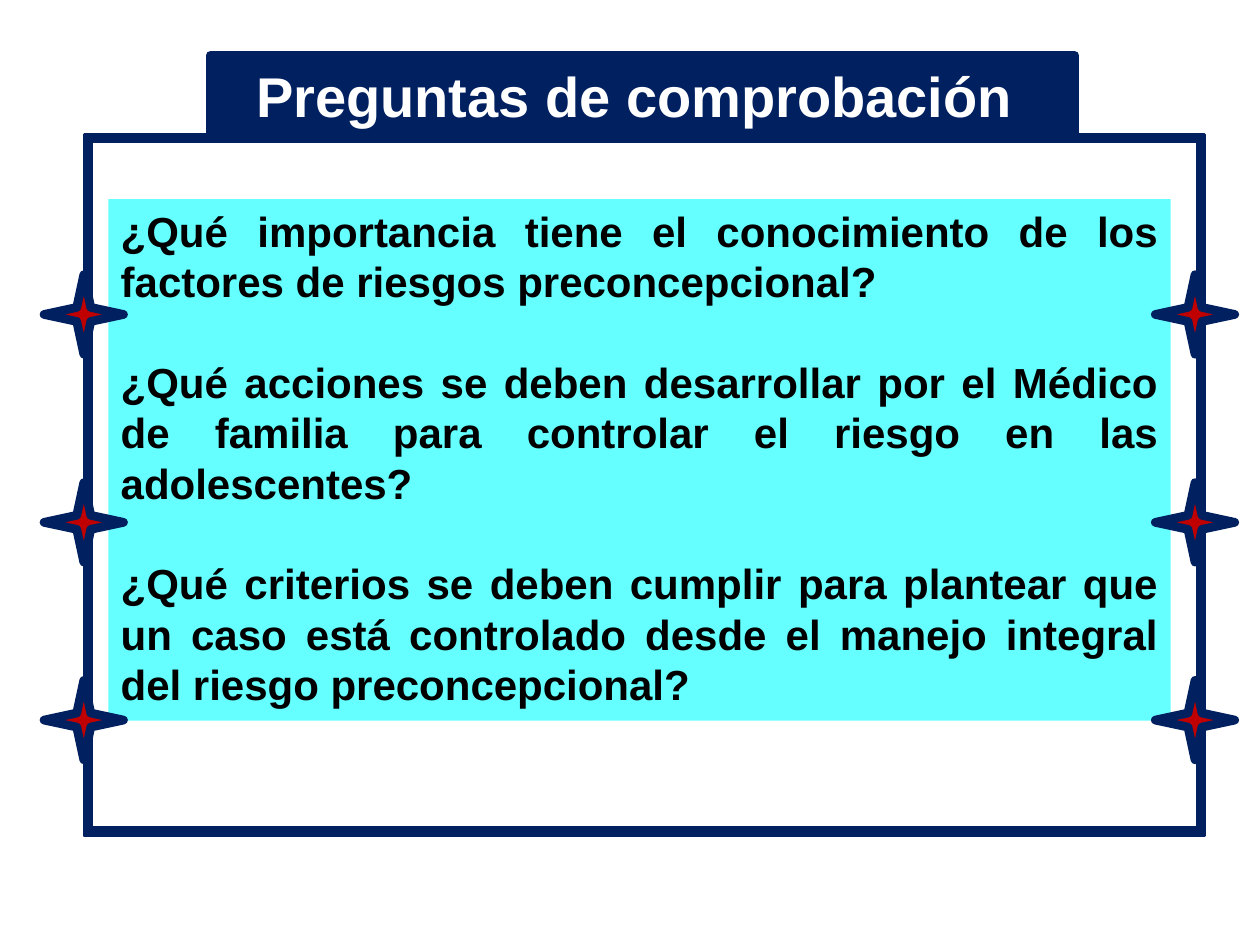
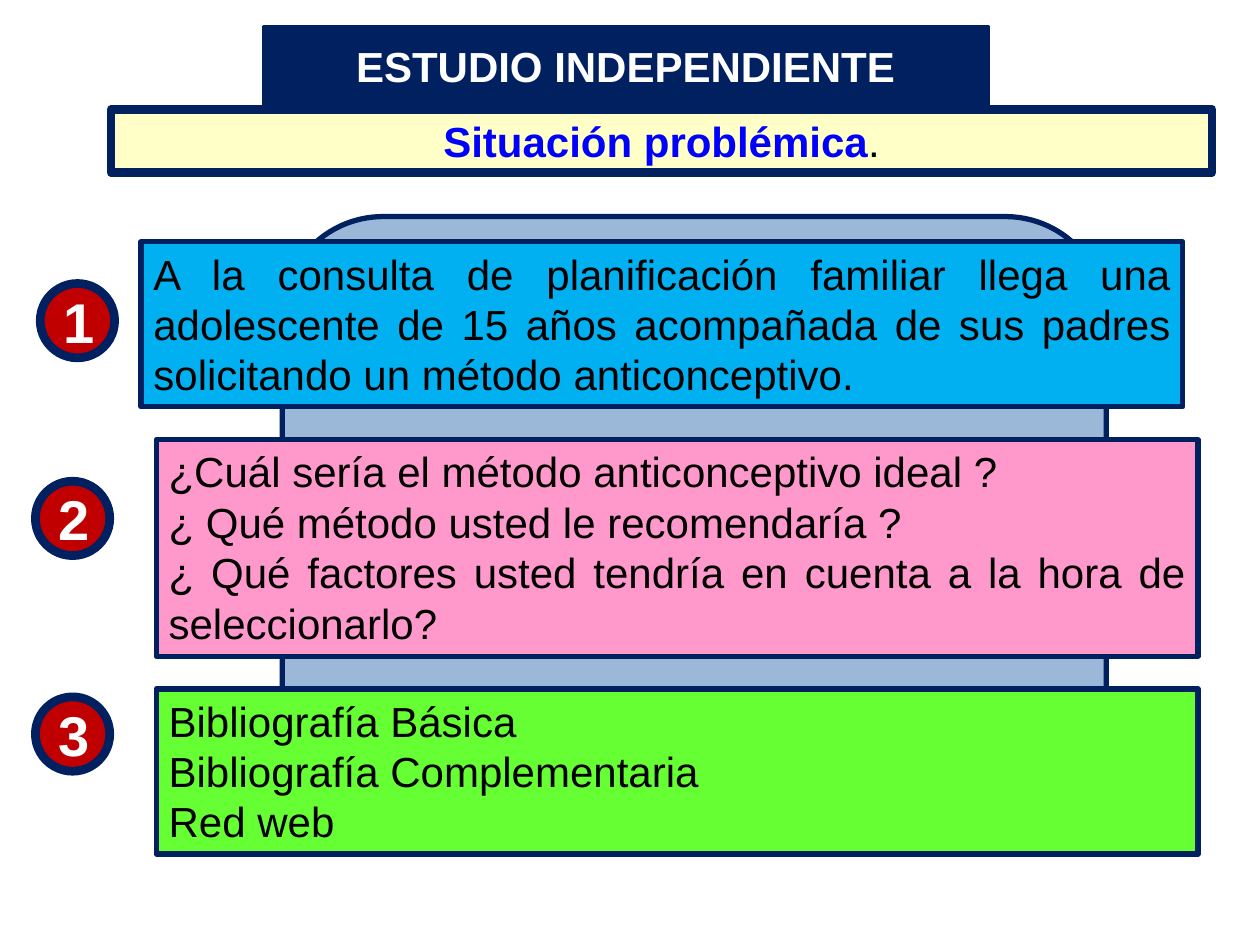
from itertools import product

from lxml import etree
from pptx import Presentation
from pptx.dml.color import RGBColor
from pptx.enum.shapes import MSO_SHAPE
from pptx.enum.text import MSO_ANCHOR, PP_ALIGN
from pptx.oxml.ns import qn
from pptx.util import Pt

RECT, FRAME, STAR = MSO_SHAPE.RECTANGLE, MSO_SHAPE.FRAME, MSO_SHAPE.STAR_4_POINT
ROUNDED, OVAL = MSO_SHAPE.ROUNDED_RECTANGLE, MSO_SHAPE.OVAL
TOP, MIDDLE = MSO_ANCHOR.TOP, MSO_ANCHOR.MIDDLE
CENTER, JUSTIFY = PP_ALIGN.CENTER, PP_ALIGN.JUSTIFY

NAVY = RGBColor(0x00, 0x20, 0x60)
RED = RGBColor(0xC0, 0x00, 0x00)
CYAN = RGBColor(0x66, 0xFF, 0xFF)
SKY = RGBColor(0x00, 0xB0, 0xF0)
PINK = RGBColor(0xFF, 0x99, 0xCC)
GREEN = RGBColor(0x66, 0xFF, 0x33)
YELLOW = RGBColor(0xFF, 0xFF, 0x00)
STEEL = RGBColor(0x4F, 0x81, 0xBD)
BLUE = RGBColor(0x00, 0x00, 0xFF)
BLACK = RGBColor(0x00, 0x00, 0x00)
WHITE = RGBColor(0xFF, 0xFF, 0xFF)

FONT = "Arial"
BODY_SIZE = 24
BIG_SIZE = 32
THICK = 5
STAR_SIZE = 45.4
BADGE_SIZE = 42.5
CARD_WIDTH = 595.4
CARD_GAP = 18.7

QUESTIONS = [
    "¿Qué importancia tiene el conocimiento de los factores de riesgos preconcepcional?",
    "¿Qué acciones se deben desarrollar por el Médico de familia para controlar "
    "el riesgo en las adolescentes?",
    "¿Qué criterios se deben cumplir para plantear que un caso está controlado "
    "desde el manejo integral del riesgo preconcepcional?",
]

# Left, height, fill, lines, badge left, badge top
CARDS = [
    (80.6, 94.3, SKY,
     ["A la consulta de planificación familiar llega una adolescente de 15 años "
      "acompañada de sus padres solicitando un método anticonceptivo."],
     23, 162),
    (89.3, 123.8, PINK,
     ["¿Cuál sería el método anticonceptivo ideal ?",
      "¿ Qué método usted le recomendaría ?",
      "¿ Qué factores usted tendría en cuenta a la hora de seleccionarlo?"],
     20.2, 275),
    (89.3, 94.3, GREEN,
     ["Bibliografía Básica", "Bibliografía Complementaria", "Red web"],
     20.2, 398.2),
]


def add_box(page, kind, left, top, width, height, fill, line_width=0, opacity=100):
    """Add a filled shape; a line_width of 0 leaves out the navy outline."""
    box = page.shapes.add_shape(kind, Pt(left), Pt(top), Pt(width), Pt(height))
    box.shadow.inherit = False
    box.fill.solid()
    box.fill.fore_color.rgb = fill
    if opacity < 100:
        color = box.fill._xPr.find(qn("a:solidFill"))[0]
        etree.SubElement(color, qn("a:alpha"), val=str(opacity * 1000))
    if line_width:
        box.line.color.rgb = NAVY
        box.line.width = Pt(line_width)
    else:
        box.line.fill.background()
    return box


def style_span(span, size, color, bold):
    span.font.name = FONT
    span.font.size = Pt(size)
    span.font.color.rgb = color
    span.font.bold = bold


def write(box, lines, size=BODY_SIZE, color=BLACK, bold=False,
          align=JUSTIFY, anchor=TOP, gap=0):
    """Write one paragraph per line, with gap points between paragraphs."""
    frame = box.text_frame
    frame.word_wrap = True
    frame.vertical_anchor = anchor
    frame.text = "\n".join(lines)
    for index, para in enumerate(frame.paragraphs):
        para.alignment = align
        if index and gap:
            para.space_before = Pt(gap)
        for span in para.runs:
            style_span(span, size, color, bold)


def add_title(page, text, left, top, width, size, line_width):
    box = add_box(page, RECT, left, top, width, 45.4, NAVY, line_width)
    write(box, [text], size, WHITE, True, CENTER, MIDDLE)


def add_subtitle(page, text, ending):
    box = add_box(page, RECT, 63.4, 62.6, 629.3, 36, YELLOW, THICK, opacity=22)
    write(box, [text], color=BLUE, bold=True, align=CENTER)
    span = box.text_frame.paragraphs[0].add_run()
    span.text = ending
    style_span(span, BODY_SIZE, BLACK, False)


def add_badge(page, number, left, top):
    box = add_box(page, OVAL, left, top, BADGE_SIZE, BADGE_SIZE, RED, THICK)
    write(box, [str(number)], BIG_SIZE, WHITE, True, CENTER, MIDDLE)


def build_questions(page):
    panel = add_box(page, RECT, 61.9, 113.8, 607, 298.1, CYAN)
    write(panel, QUESTIONS, bold=True, gap=28.7)
    border = add_box(page, FRAME, 48.2, 77, 640.1, 400.3, NAVY, 2)
    border.adjustments[0] = 0.01
    add_title(page, "Preguntas de comprobación ", 120.2, 31.7, 493.9, BIG_SIZE, THICK)
    for left, top in product((25.2, 660.2), (157, 275.8, 388.8)):
        add_box(page, STAR, left, top, STAR_SIZE, STAR_SIZE, RED, THICK)


def build_study(page):
    add_subtitle(page, "Situación problémica", ".")
    add_title(page, "ESTUDIO INDEPENDIENTE", 150.5, 15.1, 414, BODY_SIZE, 2)
    add_box(page, ROUNDED, 161.3, 123.8, 470.9, 345.6, STEEL, 3, opacity=56)
    top = 138.2
    for number, card in enumerate(CARDS, 1):
        left, height, fill, lines, badge_left, badge_top = card
        box = add_box(page, RECT, left, top, CARD_WIDTH, height, fill, 3)
        write(box, lines)
        add_badge(page, number, badge_left, badge_top)
        top += height + CARD_GAP


def main():
    deck = Presentation()
    deck.slide_width, deck.slide_height = Pt(720), Pt(540)
    blank = deck.slide_layouts[6]
    for build in (build_questions, build_study):
        build(deck.slides.add_slide(blank))
    deck.save("out.pptx")


if __name__ == "__main__":
    main()
